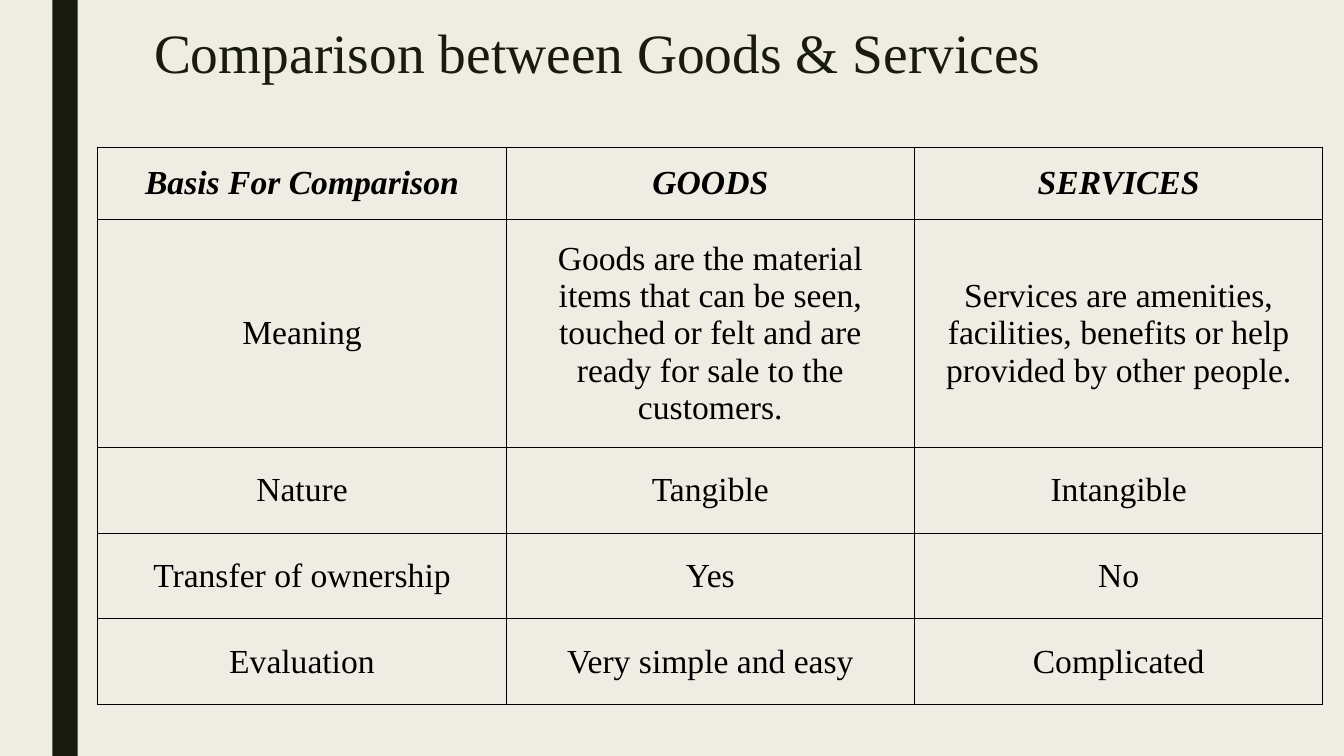
import pptx
import pptx.dml.color
import pptx.enum.shapes
import pptx.enum.text
import pptx.oxml
import pptx.oxml.ns
import pptx.util

Inches, Pt = pptx.util.Inches, pptx.util.Pt
FONT = "Times New Roman"
INK, PAPER, BLACK = "191B0E", "EFEDE3", "000000"
ROWS = [
    ("Basis For Comparison", "GOODS", "SERVICES"),
    ("Meaning",
     "Goods are the material items that can be seen, touched or felt "
     "and are ready for sale to the customers.",
     "Services are amenities, facilities, benefits or help provided by other people."),
    ("Nature", "Tangible", "Intangible"),
    ("Transfer of ownership", "Yes", "No"),
    ("Evaluation", "Very simple and easy", "Complicated"),
]
ROW_HEIGHTS = [0.72, 2.21, 0.85, 0.85, 0.85]
COLUMN_WIDTH = 4.05
CELL_MARGIN = Inches(0.13)


def color(hex_text):
    return pptx.dml.color.RGBColor.from_string(hex_text)


def add_span(para, text, size, ink):
    """Add one run in the slide's font and return it."""
    span = para.add_run()
    span.text = text
    span.font.name = FONT
    span.font.size = Pt(size)
    span.font.color.rgb = color(ink)
    return span


deck = pptx.Presentation()
deck.slide_width, deck.slide_height = Inches(13.33), Inches(7.5)
page = deck.slides.add_slide(deck.slide_layouts[6])
page.background.fill.solid()
page.background.fill.fore_color.rgb = color(PAPER)

side_bar = page.shapes.add_shape(
    pptx.enum.shapes.MSO_SHAPE.RECTANGLE,
    Inches(0.52), 0, Inches(0.25), deck.slide_height)
side_bar.shadow.inherit = False
side_bar.fill.solid()
side_bar.fill.fore_color.rgb = color(INK)
side_bar.line.fill.background()

title_box = page.shapes.add_textbox(Inches(1.43), Inches(0.21), Inches(10.5), Inches(0.94))
title_box.text_frame.word_wrap = True
para = title_box.text_frame.paragraphs[0]
para.line_spacing = 0.89
add_span(para, "Comparison between Goods & Services", 39.6, INK)

table = page.shapes.add_table(
    len(ROWS), len(ROWS[0]), Inches(0.97), Inches(1.46),
    Inches(COLUMN_WIDTH * len(ROWS[0])), Inches(sum(ROW_HEIGHTS))).table
table.horz_banding = False
for column in table.columns:
    column.width = Inches(COLUMN_WIDTH)

for row_index, texts in enumerate(ROWS):
    table.rows[row_index].height = Inches(ROW_HEIGHTS[row_index])
    for column_index, text in enumerate(texts):
        cell = table.cell(row_index, column_index)
        cell.margin_left = cell.margin_right = CELL_MARGIN
        cell.margin_top = cell.margin_bottom = CELL_MARGIN
        cell.vertical_anchor = pptx.enum.text.MSO_ANCHOR.MIDDLE
        para = cell.text_frame.paragraphs[0]
        para.alignment = pptx.enum.text.PP_ALIGN.CENTER
        span = add_span(para, text, 24, BLACK)
        span.font.bold = span.font.italic = row_index == 0

        # Borders come before the fill in the cell properties
        properties = cell._tc.get_or_add_tcPr()
        for side in ("lnL", "lnR", "lnT", "lnB"):
            properties.append(pptx.oxml.parse_xml(
                f'<a:{side} {pptx.oxml.ns.nsdecls("a")} w="{Pt(1)}"><a:solidFill>'
                f'<a:srgbClr val="{BLACK}"/></a:solidFill></a:{side}>'))
        cell.fill.background()

deck.save("out.pptx")
